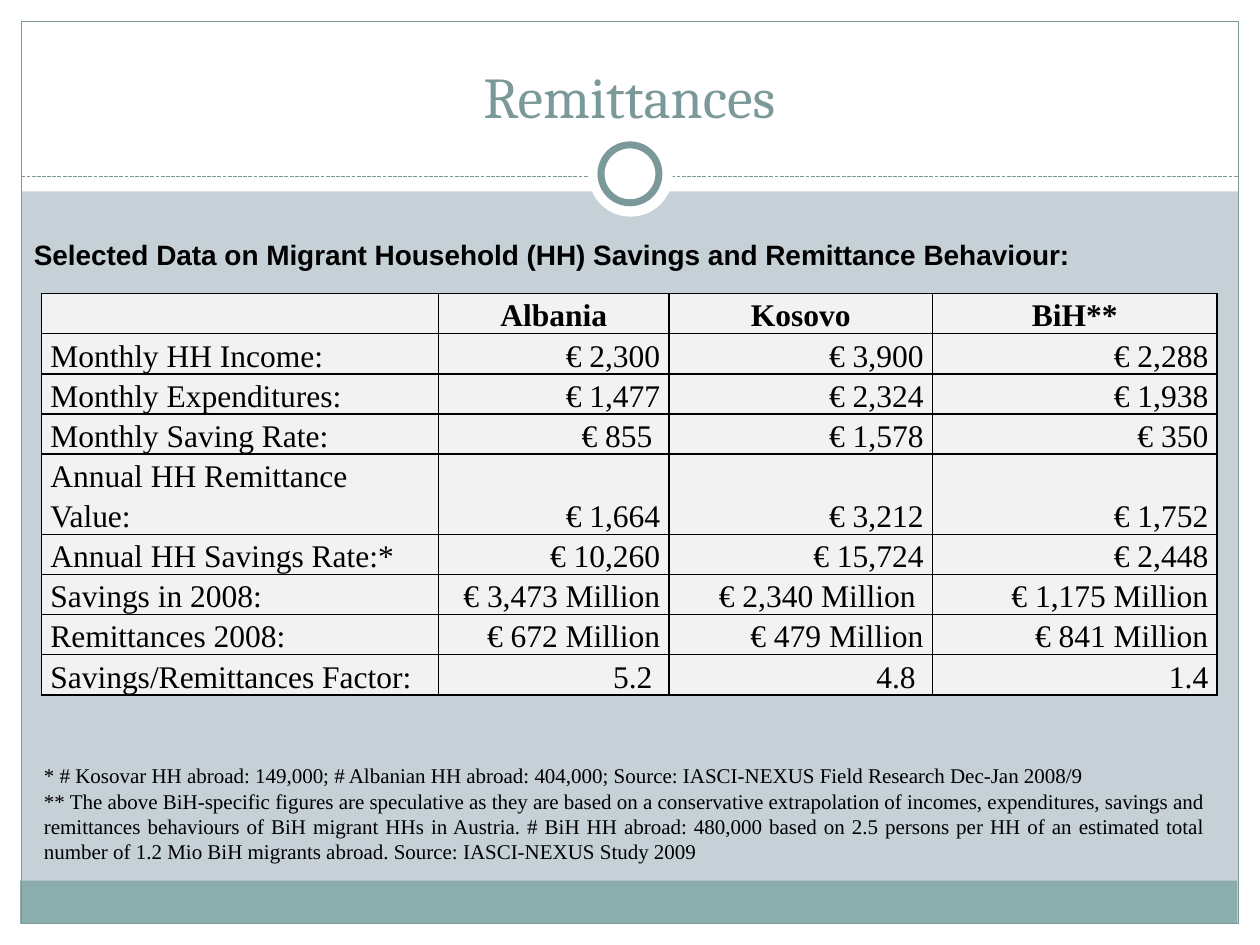
from typing import NamedTuple, Optional

from lxml import etree
from pptx import Presentation
from pptx import util as u
from pptx.dml.color import RGBColor
from pptx.enum import dml, shapes, text
from pptx.oxml import ns

WHITE = RGBColor(0xFF, 0xFF, 0xFF)
BLACK = RGBColor(0x00, 0x00, 0x00)
BACKDROP = RGBColor(0xC5, 0xD1, 0xD7)
FOOTER = RGBColor(0x8C, 0xAD, 0xAE)
ACCENT = RGBColor(0x7C, 0x99, 0x9A)
CELL = RGBColor(0xF2, 0xF2, 0xF2)

RECT = shapes.MSO_SHAPE.RECTANGLE
OVAL = shapes.MSO_SHAPE.OVAL
ALIGN = text.PP_ALIGN
ANCHOR = text.MSO_ANCHOR


class Part(NamedTuple):
    left: float
    top: float
    width: float
    height: float
    fill: Optional[RGBColor] = WHITE
    line_width: float = 0
    kind: int = RECT


class TextStyle(NamedTuple):
    font: str
    size: float
    color: RGBColor = BLACK
    bold: bool = False


# Frame behind the divider, then the ring on top of it
FRAME = [
    Part(0, 7.33, 10, 0.17),
    Part(0, 0, 10, 1.52),
    Part(0, 0, 0.17, 7.5),
    Part(9.83, 0, 0.17, 7.5),
    Part(0.16, 6.99, 9.66, 0.34, FOOTER),
    Part(0.17, 0.17, 9.66, 7.16, None, 0.75),
]
RING = [
    Part(4.67, 1.05, 0.67, 0.67, kind=OVAL),
    Part(4.77, 1.15, 0.46, 0.46, line_width=4, kind=OVAL),
]

TITLE_STYLE = TextStyle("Cambria", 33, ACCENT)
HEADING_STYLE = TextStyle("Arial", 16, bold=True)
NOTE_STYLE = TextStyle("Times New Roman", 12)
BODY_STYLE = TextStyle("Times New Roman", 18)
HEAD_STYLE = BODY_STYLE._replace(bold=True)

HEADING = "Selected Data on Migrant Household (HH) Savings and Remittance Behaviour:"
NOTES = [
    "* # Kosovar HH abroad: 149,000; # Albanian HH abroad: 404,000; "
    "Source: IASCI-NEXUS Field Research Dec-Jan 2008/9",
    "** The above BiH-specific figures are speculative as they are based on a "
    "conservative extrapolation of incomes, expenditures, savings and remittances "
    "behaviours of BiH migrant HHs in Austria. # BiH HH abroad: 480,000 based on 2.5 "
    "persons per HH of an estimated total number of 1.2 Mio BiH migrants abroad. "
    "Source: IASCI-NEXUS Study 2009",
]

COLUMN_WIDTHS = [3.15, 1.83, 2.09, 2.26]
ROW_HEIGHT = 0.23
FIGURES = [
    ["", "Albania", "Kosovo", "BiH**"],
    ["Monthly HH Income:", "€ 2,300", "€ 3,900", "€ 2,288"],
    ["Monthly Expenditures:", "€ 1,477", "€ 2,324", "€ 1,938"],
    ["Monthly Saving Rate:", "€ 855 ", "€ 1,578", "€ 350"],
    ["Annual HH Remittance Value:", "€ 1,664", "€ 3,212", "€ 1,752"],
    ["Annual HH Savings Rate:*", "€ 10,260", "€ 15,724", "€ 2,448"],
    ["Savings in 2008:", "€ 3,473 Million", "€ 2,340 Million ", "€ 1,175 Million"],
    ["Remittances 2008:", "€ 672 Million", "€ 479 Million", "€ 841 Million"],
    ["Savings/Remittances Factor:", "5.2 ", "4.8 ", "1.4"],
]
CELL_FORMAT = {
    "margin_left": u.Inches(0.07),
    "margin_right": u.Inches(0.07),
    "margin_top": 0,
    "margin_bottom": 0,
}


def apply(target, values: dict) -> None:
    for name, value in values.items():
        setattr(target, name, value)


def write(paragraph, words: str, style: TextStyle, align, spacing=None) -> None:
    apply(paragraph, {"alignment": align, "line_spacing": spacing})
    if not words:
        return
    run = paragraph.add_run()
    run.text = words
    apply(run.font, {"name": style.font, "size": u.Pt(style.size), "bold": style.bold})
    run.font.color.rgb = style.color


def draw_part(slide, part: Part) -> None:
    box = [u.Inches(length) for length in part[:4]]
    shape = slide.shapes.add_shape(part.kind, *box)
    shape.shadow.inherit = False
    if part.fill is None:
        shape.fill.background()
    else:
        shape.fill.solid()
        shape.fill.fore_color.rgb = part.fill
    if part.line_width:
        shape.line.color.rgb = ACCENT
        shape.line.width = u.Pt(part.line_width)
    else:
        shape.line.fill.background()


def draw_divider(slide) -> None:
    divider = slide.shapes.add_connector(
        shapes.MSO_CONNECTOR.STRAIGHT,
        u.Inches(0.17), u.Inches(1.4), u.Inches(9.83), u.Inches(1.4))
    divider.line.color.rgb = ACCENT
    apply(divider.line, {"width": u.Pt(0.75),
                         "dash_style": dml.MSO_LINE.SQUARE_DOT})
    etree.SubElement(divider.element.spPr, ns.qn("a:effectLst"))


def draw_text(slide, box: tuple, lines: list, style: TextStyle, wrap: bool) -> None:
    frame = slide.shapes.add_textbox(*map(u.Inches, box)).text_frame
    apply(frame, {"word_wrap": wrap, "vertical_anchor": ANCHOR.MIDDLE,
                  "auto_size": text.MSO_AUTO_SIZE.SHAPE_TO_FIT_TEXT})
    for index, line in enumerate(lines):
        paragraph = frame.add_paragraph() if index else frame.paragraphs[0]
        write(paragraph, line, style, ALIGN.JUSTIFY)


def add_borders(cell) -> None:
    properties = cell._tc.get_or_add_tcPr()
    for index, side in enumerate(("a:lnL", "a:lnR", "a:lnT", "a:lnB")):
        border = etree.Element(ns.qn(side), w=str(u.Pt(1)))
        fill = etree.SubElement(border, ns.qn("a:solidFill"))
        etree.SubElement(fill, ns.qn("a:srgbClr"), val=str(BLACK))
        properties.insert(index, border)


def draw_table(slide) -> None:
    table = slide.shapes.add_table(
        len(FIGURES), len(COLUMN_WIDTHS), u.Inches(0.33), u.Inches(2.33),
        u.Inches(sum(COLUMN_WIDTHS)), u.Inches(ROW_HEIGHT * len(FIGURES))).table
    apply(table, {"first_row": False, "horz_banding": False})
    for column, width in zip(table.columns, COLUMN_WIDTHS):
        column.width = u.Inches(width)
    anchors = {0: ANCHOR.MIDDLE, 1: ANCHOR.TOP}
    for r, row in enumerate(FIGURES):
        table.rows[r].height = u.Inches(ROW_HEIGHT)
        for c, words in enumerate(row):
            cell = table.cell(r, c)
            apply(cell, CELL_FORMAT)
            cell.vertical_anchor = anchors.get(r, ANCHOR.BOTTOM)
            cell.fill.solid()
            cell.fill.fore_color.rgb = CELL
            add_borders(cell)
            align = ALIGN.CENTER if r == 0 else ALIGN.RIGHT if c else ALIGN.LEFT
            write(cell.text_frame.paragraphs[0], words,
                  BODY_STYLE if r else HEAD_STYLE, align, 1.15)


def draw_title(slide) -> None:
    title = slide.shapes.title
    apply(title, {"left": u.Inches(0.33), "top": u.Inches(0.25),
                  "width": u.Inches(9.33), "height": u.Inches(0.83)})
    title.text_frame.vertical_anchor = ANCHOR.BOTTOM
    write(title.text_frame.paragraphs[0], "Remittances", TITLE_STYLE, ALIGN.CENTER)
    # Bring the title in front of the white band
    slide.shapes.element.append(title.element)


def main() -> None:
    deck = Presentation()
    apply(deck, {"slide_width": u.Inches(10), "slide_height": u.Inches(7.5)})
    slide = deck.slides.add_slide(deck.slide_layouts[5])
    slide.background.fill.solid()
    slide.background.fill.fore_color.rgb = BACKDROP

    # Decoration
    for part in FRAME:
        draw_part(slide, part)
    draw_divider(slide)
    for part in RING:
        draw_part(slide, part)

    # Content
    draw_title(slide)
    draw_table(slide)
    draw_text(slide, (0.25, 6, 9.42, 0.91), NOTES, NOTE_STYLE, True)
    draw_text(slide, (0.17, 1.83, 8.53, 0.37), [HEADING], HEADING_STYLE, False)
    deck.save("out.pptx")


if __name__ == "__main__":
    main()
